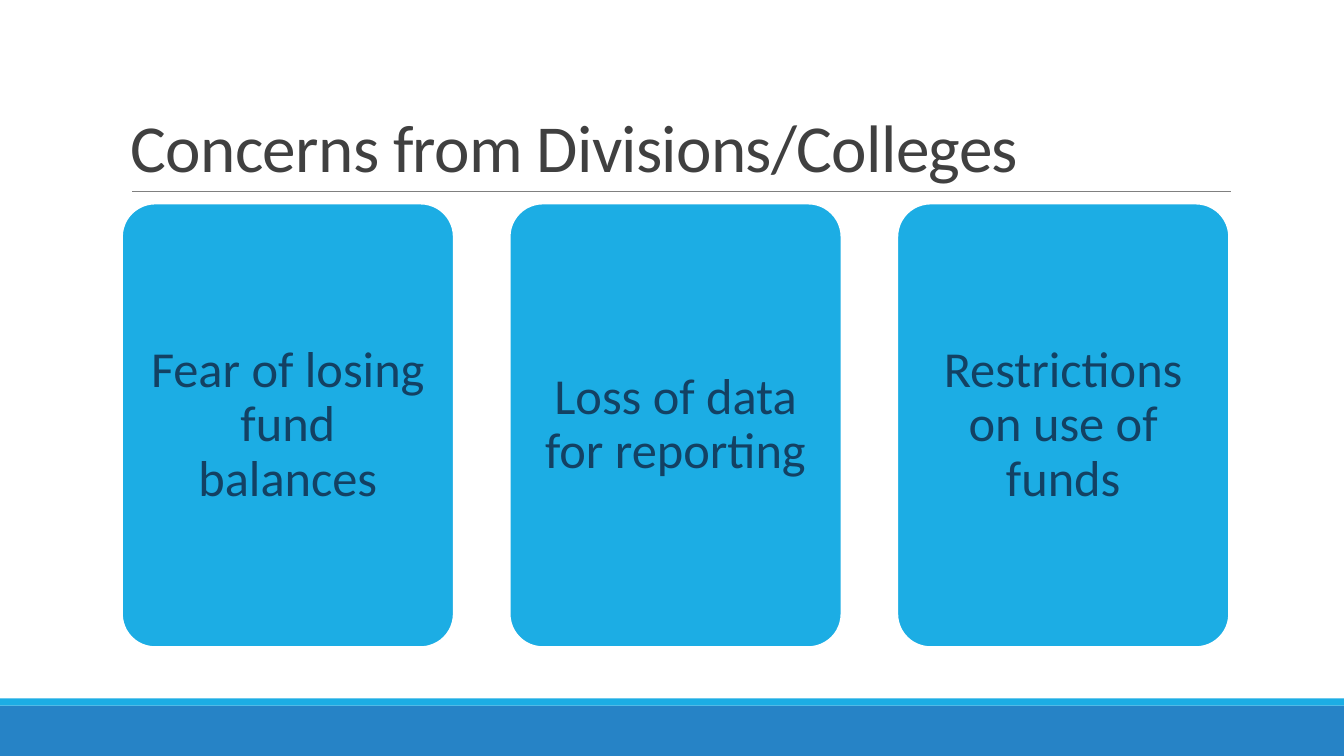
"""Build the slide on concerns from divisions and colleges."""
from lxml import etree
from pptx import Presentation, util as u
from pptx.dml.color import RGBColor
from pptx.enum import shapes, text
from pptx.oxml import ns

TITLE = "Concerns from Divisions/Colleges"
CONCERNS = [
    "Fear of losing fund balances",
    "Loss of data for reporting",
    "Restrictions on use of funds",
]

FONT = "Calibri"
WHITE = RGBColor(0xFF, 0xFF, 0xFF)
SKY = RGBColor(0x1C, 0xAD, 0xE4)
BLUE = RGBColor(0x26, 0x83, 0xC6)
NAVY = RGBColor(0x13, 0x41, 0x63)
CHARCOAL = RGBColor(0x40, 0x40, 0x40)
GRAY = RGBColor(0x80, 0x80, 0x80)

WIDTH, HEIGHT = 13.33, 7.5
BANDS = [(7, 0.5, BLUE), (6.93, 0.07, SKY)]
CARD_LEFT, CARD_TOP, CARD_WIDTH, CARD_HEIGHT = 1.21, 2.02, 3.29, 4.4
CARD_STEP = 3.845
CARD_INSET = 0.15


def add_block(slide, kind, left, top, width, height, color):
    block = slide.shapes.add_shape(
        kind, u.Inches(left), u.Inches(top), u.Inches(width), u.Inches(height))
    block.shadow.inherit = False
    block.fill.solid()
    block.fill.fore_color.rgb = color
    block.line.fill.background()
    return block


def write(shape, words, size, color, spacing, anchor, align):
    frame = shape.text_frame
    frame.word_wrap = True
    frame.vertical_anchor = anchor
    frame.text = words
    para = frame.paragraphs[0]
    para.alignment = align
    para.line_spacing = spacing
    span = para.runs[0]
    span.font.name = FONT
    span.font.size = u.Pt(size)
    span.font.color.rgb = color
    return span


def add_title(slide):
    box = slide.shapes.add_textbox(
        u.Inches(1.2), u.Inches(0.31), u.Inches(11), u.Inches(1.59))
    span = write(box, TITLE, 48, CHARCOAL, 0.85,
                 text.MSO_ANCHOR.BOTTOM, text.PP_ALIGN.LEFT)
    span.font._element.set("spc", "-50")


def add_rule(slide):
    rule = slide.shapes.add_connector(
        shapes.MSO_CONNECTOR.STRAIGHT,
        u.Inches(1.31), u.Inches(1.9), u.Inches(12.21), u.Inches(1.9))
    rule.line.color.rgb = GRAY
    rule.line.width = u.Pt(0.5)
    etree.SubElement(rule._element.spPr, ns.qn("a:effectLst"))


def add_card(slide, index, words):
    card = add_block(slide, shapes.MSO_SHAPE.ROUNDED_RECTANGLE,
                     CARD_LEFT + index * CARD_STEP, CARD_TOP,
                     CARD_WIDTH, CARD_HEIGHT, SKY)
    card.adjustments[0] = 0.1
    card.line.color.rgb = WHITE
    card.line.width = u.Pt(1.25)
    frame = card.text_frame
    frame.margin_left = frame.margin_right = u.Inches(CARD_INSET)
    frame.margin_top = frame.margin_bottom = u.Inches(CARD_INSET)
    write(card, words, 36, NAVY, 0.9,
          text.MSO_ANCHOR.MIDDLE, text.PP_ALIGN.CENTER)


def main():
    deck = Presentation()
    deck.slide_width = u.Inches(WIDTH)
    deck.slide_height = u.Inches(HEIGHT)
    slide = deck.slides.add_slide(deck.slide_layouts[6])
    for top, height, color in BANDS:
        add_block(slide, shapes.MSO_SHAPE.RECTANGLE, 0, top, WIDTH, height, color)
    add_rule(slide)
    add_title(slide)
    for index, words in enumerate(CONCERNS):
        add_card(slide, index, words)
    deck.save("out.pptx")


if __name__ == "__main__":
    main()
